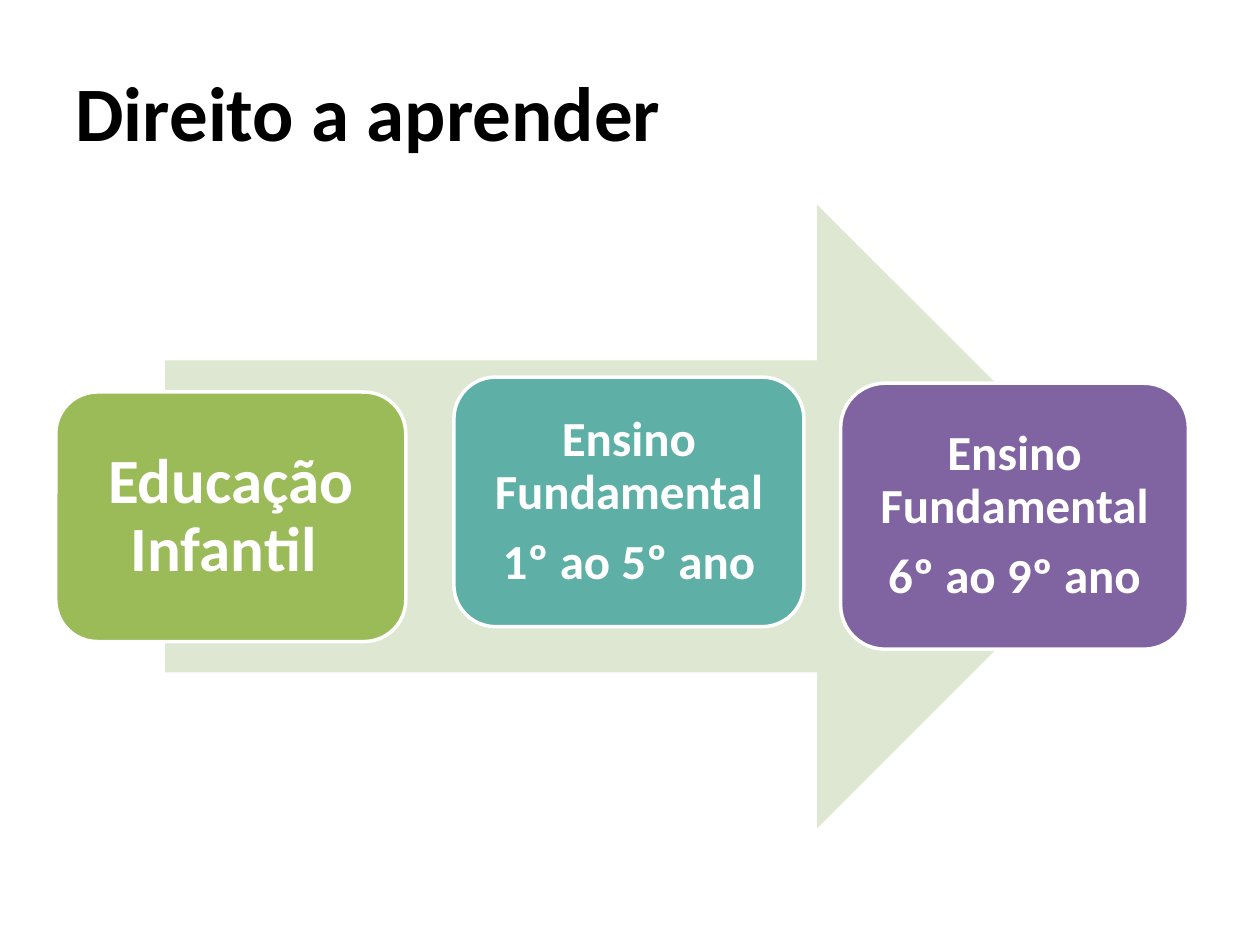
from pptx import Presentation
from pptx.dml.color import RGBColor
from pptx.enum.shapes import MSO_SHAPE
from pptx.enum.text import MSO_ANCHOR, PP_ALIGN
from pptx.util import Pt


def color(hex_value):
    return RGBColor.from_string(hex_value)


def write_text(shape, lines, size, hex_value, alignment, inset):
    """Fill the shape with one bold paragraph per line, centred vertically."""
    frame = shape.text_frame
    frame.word_wrap = True
    frame.vertical_anchor = MSO_ANCHOR.MIDDLE
    for side in ("left", "top", "right", "bottom"):
        setattr(frame, f"margin_{side}", Pt(inset))
    for index, line in enumerate(lines):
        paragraph = frame.paragraphs[0] if index == 0 else frame.add_paragraph()
        paragraph.alignment = alignment
        paragraph.line_spacing = 0.9
        if index > 0:
            paragraph.space_before = Pt(0.35 * size)
        run = paragraph.add_run()
        run.text = line
        font_format = {"name": "Calibri", "size": Pt(size), "bold": True}
        for attribute, value in font_format.items():
            setattr(run.font, attribute, value)
        run.font.color.rgb = color(hex_value)


presentation = Presentation()
presentation.slide_width = Pt(720)
presentation.slide_height = Pt(540)
slide = presentation.slides.add_slide(presentation.slide_layouts[6])

title = slide.shapes.add_textbox(Pt(36), Pt(21.6), Pt(648), Pt(90))
write_text(title, ["Direito a aprender"], 44, "000000", PP_ALIGN.LEFT, 7.2)

arrow = slide.shapes.add_shape(
    MSO_SHAPE.RIGHT_ARROW, Pt(94.3), Pt(116.9), Pt(550.8), Pt(356.4)
)
arrow.shadow.inherit = False
arrow.fill.solid()
arrow.fill.fore_color.rgb = color("DEE7D1")
arrow.line.fill.background()

# left, top, width, height, fill, text size, inset, lines
stages = [
    (31.9, 224, 200, 142.6, "9BBB59", 36, 10.8, ["Educação Infantil "]),
    (259.4, 215.5, 200, 142.6, "5EAFA6", 28, 8.6,
     ["Ensino Fundamental", "1º ao 5º ano"]),
    (480.4, 219, 198.7, 152, "8064A2", 28, 5.8,
     ["Ensino Fundamental", "6º ao 9º ano"]),
]
for left, top, width, height, fill, size, inset, lines in stages:
    stage = slide.shapes.add_shape(
        MSO_SHAPE.ROUNDED_RECTANGLE, Pt(left), Pt(top), Pt(width), Pt(height)
    )
    stage.shadow.inherit = False
    stage.fill.solid()
    stage.fill.fore_color.rgb = color(fill)
    stage.line.color.rgb = color("FFFFFF")
    stage.line.width = Pt(2)
    write_text(stage, lines, size, "FFFFFF", PP_ALIGN.CENTER, inset)

presentation.save("out.pptx")
